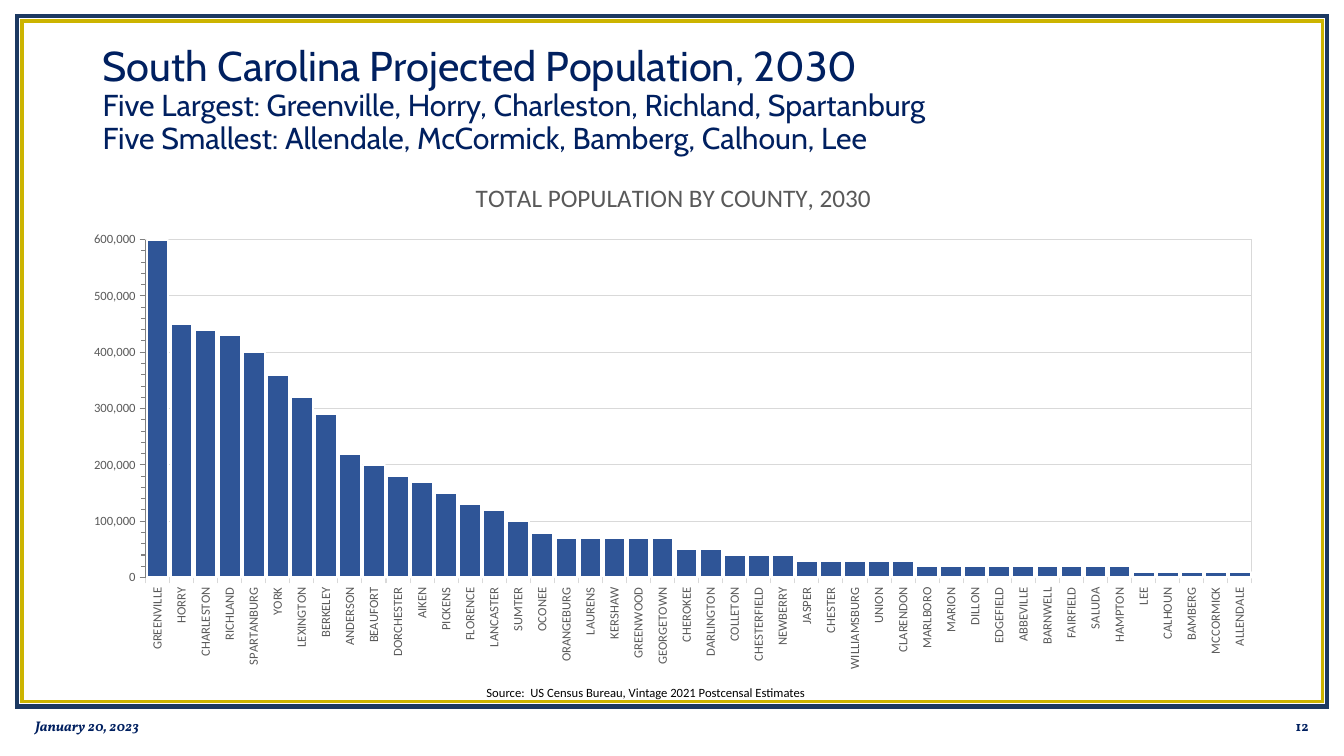
from dataclasses import dataclass

from pptx import Presentation
from pptx.chart.data import CategoryChartData
from pptx.dml.color import RGBColor
from pptx.enum.chart import XL_CHART_TYPE as ChartType, XL_TICK_MARK as Tick
from pptx.enum.shapes import MSO_SHAPE as Preset
from pptx.enum.text import MSO_ANCHOR as Anchor, PP_ALIGN as Align
from pptx.oxml import parse_xml
from pptx.oxml.ns import nsdecls
from pptx.util import Pt


@dataclass(frozen=True)
class Theme:
    navy: str = "002060"
    frame_blue: str = "1C3961"
    frame_gold: str = "CCB400"
    bar: str = "2F5597"
    white: str = "FFFFFF"
    black: str = "000000"
    label: str = "595959"
    grid: str = "D9D9D9"
    axis: str = "808080"
    heading_font: str = "Cabin"
    footer_font: str = "Vollkorn"
    chart_font: str = "Calibri"
    heading: float = 29.7
    subheading: float = 21.6
    chart_title: float = 18
    footer: float = 10
    small: float = 9


THEME = Theme()
HEADING = "South Carolina Projected Population, 2030"
SUBHEADINGS = [
    "Five Largest: Greenville, Horry, Charleston, Richland, Spartanburg",
    "Five Smallest: Allendale, McCormick, Bamberg, Calhoun, Lee",
]
POPULATION = {
    "GREENVILLE": 600000, "HORRY": 450000, "CHARLESTON": 440000,
    "RICHLAND": 430000, "SPARTANBURG": 400000, "YORK": 360000,
    "LEXINGTON": 320000, "BERKELEY": 290000, "ANDERSON": 220000,
    "BEAUFORT": 200000, "DORCHESTER": 180000, "AIKEN": 170000,
    "PICKENS": 150000, "FLORENCE": 130000, "LANCASTER": 120000,
    "SUMTER": 100000, "OCONEE": 80000, "ORANGEBURG": 70000,
    "LAURENS": 70000, "KERSHAW": 70000, "GREENWOOD": 70000,
    "GEORGETOWN": 70000, "CHEROKEE": 50000, "DARLINGTON": 50000,
    "COLLETON": 40000, "CHESTERFIELD": 40000, "NEWBERRY": 40000,
    "JASPER": 30000, "CHESTER": 30000, "WILLIAMSBURG": 30000,
    "UNION": 30000, "CLARENDON": 30000, "MARLBORO": 20000,
    "MARION": 20000, "DILLON": 20000, "EDGEFIELD": 20000,
    "ABBEVILLE": 20000, "BARNWELL": 20000, "FAIRFIELD": 20000,
    "SALUDA": 20000, "HAMPTON": 20000, "LEE": 10000,
    "CALHOUN": 10000, "BAMBERG": 10000, "MCCORMICK": 10000,
    "ALLENDALE": 10000,
}
CHART_WIDTH, CHART_HEIGHT = 862, 371


def style_font(font, name, size, color, bold=False, italic=False):
    font.name = name
    font.size = Pt(size)
    font.color.rgb = RGBColor.from_string(color)
    font.bold = bold
    font.italic = italic


def style_line(line, color, width):
    line.color.rgb = RGBColor.from_string(color)
    line.width = Pt(width)


def add_frame(page, left, top, width, height, color, weight):
    frame = page.shapes.add_shape(
        Preset.RECTANGLE, Pt(left), Pt(top), Pt(width), Pt(height))
    frame.shadow.inherit = False
    frame.fill.background()
    style_line(frame.line, color, weight)
    outline = frame._element.spPr.xpath("./a:ln")[0]
    outline.append(parse_xml(f'<a:miter {nsdecls("a")} lim="800000"/>'))


def add_text(page, left, top, width, height, lines, wrap=True, anchor=Anchor.TOP):
    box = page.shapes.add_textbox(Pt(left), Pt(top), Pt(width), Pt(height))
    frame = box.text_frame
    frame.word_wrap = wrap
    frame.vertical_anchor = anchor
    frame.text = "\n".join(lines)
    return frame.paragraphs


def add_heading(page):
    paragraphs = add_text(page, 66.2, 29, 828, 116, [HEADING, *SUBHEADINGS])
    sizes = [THEME.heading] + [THEME.subheading] * len(SUBHEADINGS)
    for para, size in zip(paragraphs, sizes):
        para.line_spacing = 0.9
        for span in para.runs:
            style_font(span.font, THEME.heading_font, size, THEME.navy)


def add_footer(page, left, text, align, italic):
    para = add_text(page, left, 504, 216, 28.8, [text], anchor=Anchor.MIDDLE)[0]
    para.alignment = align
    style_font(para.runs[0].font, THEME.footer_font, THEME.footer, THEME.navy,
               bold=True, italic=italic)


def add_source(page):
    text = "Source:  US Census Bureau, Vintage 2021 Postcensal Estimates"
    para = add_text(page, 340.4, 485.8, 244.8, 18, [text], wrap=False)[0]
    style_font(para.runs[0].font, THEME.chart_font, THEME.small, THEME.black)


def place_part(part, index, left, top, width=None, height=None):
    for old in part.xpath("./c:layout"):
        part.remove(old)
    target = '<c:layoutTarget val="inner"/>' if width else ""
    modes = '<c:xMode val="edge"/><c:yMode val="edge"/>'
    fractions = {"x": left / CHART_WIDTH, "y": top / CHART_HEIGHT}
    if width:
        fractions.update(w=width / CHART_WIDTH, h=height / CHART_HEIGHT)
    values = "".join(f'<c:{key} val="{value:.4f}"/>' for key, value in fractions.items())
    part.insert(index, parse_xml(
        f'<c:layout {nsdecls("c")}><c:manualLayout>{target}{modes}{values}'
        "</c:manualLayout></c:layout>"))


def style_axis(axis, color):
    axis.major_tick_mark = Tick.OUTSIDE
    style_line(axis.format.line, color, 0.75)
    style_font(axis.tick_labels.font, THEME.chart_font, THEME.small, THEME.label)


def style_axes(chart):
    counties, people = chart.category_axis, chart.value_axis
    style_axis(counties, THEME.grid)
    style_axis(people, THEME.axis)
    for body in chart._chartSpace.xpath(".//c:catAx/c:txPr/a:bodyPr"):
        body.set("rot", "-5400000")
        body.set("vert", "horz")
    people.minimum_scale, people.maximum_scale = 0, 600000
    people.major_unit, people.minor_unit = 100000, 20000
    people.minor_tick_mark = Tick.OUTSIDE
    people.tick_labels.number_format = "#,##0"
    people.tick_labels.number_format_is_linked = False
    style_line(people.major_gridlines.format.line, THEME.grid, 0.75)


def style_bars(chart):
    plot = chart.plots[0]
    plot.gap_width = 10
    plot.vary_by_categories = False
    bars = plot.series[0]
    bars.invert_if_negative = False
    bars.format.fill.solid()
    bars.format.fill.fore_color.rgb = RGBColor.from_string(THEME.bar)
    style_line(bars.format.line, THEME.white, 1.5)


def add_population_chart(page):
    data = CategoryChartData(number_format="#,##0")
    data.categories = list(POPULATION)
    data.add_series("Series 1", list(POPULATION.values()))
    chart = page.shapes.add_chart(
        ChartType.COLUMN_CLUSTERED, Pt(50.4), Pt(114.5),
        Pt(CHART_WIDTH), Pt(CHART_HEIGHT), data).chart
    style_font(chart.font, THEME.chart_font, THEME.footer, THEME.black)
    chart.has_legend = False
    chart.has_title = True
    title = chart.chart_title.text_frame
    title.text = "TOTAL POPULATION BY COUNTY, 2030"
    style_font(title.paragraphs[0].runs[0].font, THEME.chart_font,
               THEME.chart_title, THEME.label)
    style_axes(chart)
    style_bars(chart)
    place_part(chart._chartSpace.xpath("./c:chart/c:title")[0], 1, 286.2, 11.3)
    plot_area = chart._chartSpace.xpath("./c:chart/c:plotArea")[0]
    place_part(plot_area, 0, 53.5, 56.7, 790.4, 241.4)
    plot_area.append(parse_xml(
        f'<c:spPr {nsdecls("c", "a")}><a:noFill/><a:ln w="{Pt(0.75)}"><a:solidFill>'
        f'<a:srgbClr val="{THEME.grid}"/></a:solidFill></a:ln></c:spPr>'))


def main():
    deck = Presentation()
    deck.slide_width, deck.slide_height = Pt(960), Pt(540)
    page = deck.slides.add_slide(deck.slide_layouts[6])
    add_frame(page, 12.2, 11.5, 936, 493.2, THEME.frame_blue, 3)
    add_frame(page, 15.8, 15.1, 928.8, 486, THEME.frame_gold, 2.5)
    add_heading(page)
    add_footer(page, 18, "January 20, 2023", Align.LEFT, italic=True)
    add_footer(page, 725.8, "12", Align.RIGHT, italic=False)
    add_source(page)
    add_population_chart(page)
    deck.save("out.pptx")


if __name__ == "__main__":
    main()
